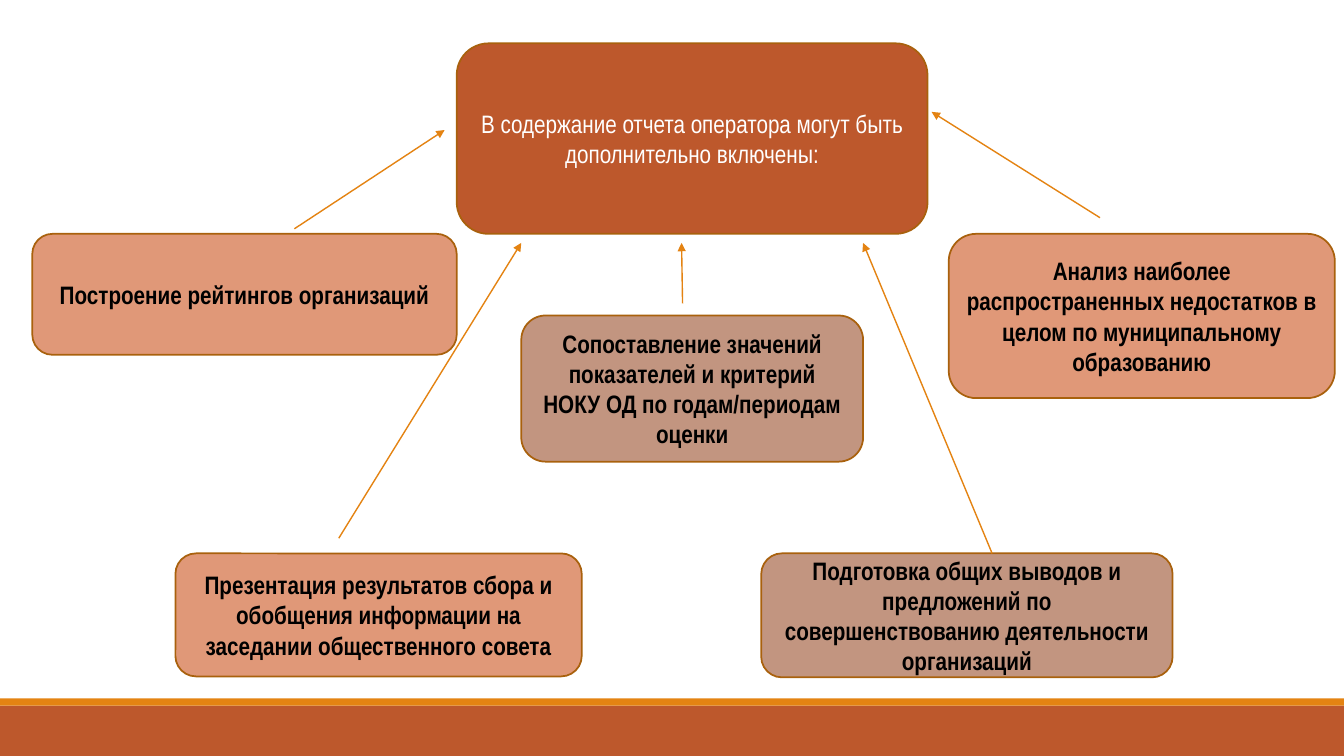
from pptx import Presentation
from pptx.dml.color import RGBColor
from pptx.enum.shapes import MSO_CONNECTOR, MSO_SHAPE
from pptx.enum.text import MSO_ANCHOR, PP_ALIGN
from pptx.oxml.ns import qn
from pptx.util import Inches, Pt
from lxml.etree import SubElement

RUST, ORANGE, BROWN = "BD582C", "E48312", "A9610D"
SALMON, TAUPE = "E09878", "C29580"
WHITE, BLACK = "FFFFFF", "000000"

BANDS = [(7, 0.5, RUST), (6.93, 0.07, ORANGE)]

TITLE = ("В содержание отчета оператора могут быть дополнительно включены:",
         (4.53, 0.43, 4.67, 1.89), RUST)

ITEMS = [
    ("Анализ наиболее распространенных недостатков в целом по муниципальному образованию",
     (9.41, 2.32, 3.83, 1.63), SALMON),
    ("Сопоставление значений показателей и критерий НОКУ ОД по годам/периодам оценки",
     (5.17, 3.13, 3.39, 1.45), TAUPE),
    ("Подготовка общих выводов и предложений по совершенствованию деятельности организаций",
     (7.55, 5.49, 4.08, 1.23), TAUPE),
    ("Презентация результатов сбора и обобщения информации на заседании общественного совета",
     (1.74, 5.49, 4.03, 1.22), SALMON),
    ("Построение рейтингов организаций",
     (0.32, 2.32, 4.21, 1.2), SALMON),
]

ARROWS = [
    ((3.36, 5.34), (5.17, 2.41)),
    ((2.92, 2.27), (4.41, 1.29)),
    ((10.91, 2.16), (9.24, 1.11)),
    ((6.77, 3.01), (6.76, 2.41)),
    ((9.84, 5.49), (8.56, 2.41)),
]


def color(value):
    return RGBColor.from_string(value)


def add_filled(slide, kind, box, fill):
    shape = slide.shapes.add_shape(kind, *map(Inches, box))
    shape.shadow.inherit = False
    shape.fill.solid()
    shape.fill.fore_color.rgb = color(fill)
    return shape


def add_band(slide, top, height, fill):
    band = add_filled(slide, MSO_SHAPE.RECTANGLE, (0, top, 13.33, height), fill)
    band.line.fill.background()


def add_box(slide, text, box, fill, text_color, bold):
    shape = add_filled(slide, MSO_SHAPE.ROUNDED_RECTANGLE, box, fill)
    shape.line.color.rgb = color(BROWN)
    shape.line.width = Pt(1.25)
    frame = shape.text_frame
    frame.word_wrap = True
    frame.vertical_anchor = MSO_ANCHOR.MIDDLE
    paragraph = frame.paragraphs[0]
    paragraph.text = text
    paragraph.alignment = PP_ALIGN.CENTER
    paragraph.font.name = "Arial Narrow"
    paragraph.font.size = Pt(18)
    paragraph.font.bold = bold
    paragraph.font.color.rgb = color(text_color)


def add_arrow(slide, start, end):
    arrow = slide.shapes.add_connector(MSO_CONNECTOR.STRAIGHT, *map(Inches, start + end))
    arrow.line.color.rgb = color(ORANGE)
    arrow.line.width = Pt(1)
    SubElement(arrow.line._get_or_add_ln(), qn("a:tailEnd"), type="triangle")
    SubElement(arrow._element.spPr, qn("a:effectLst"))


def main():
    presentation = Presentation()
    presentation.slide_width = Inches(13.33)
    presentation.slide_height = Inches(7.5)
    slide = presentation.slides.add_slide(presentation.slide_layouts[6])
    for band in BANDS:
        add_band(slide, *band)
    add_box(slide, *TITLE, WHITE, False)
    for item in ITEMS:
        add_box(slide, *item, BLACK, True)
    for start, end in ARROWS:
        add_arrow(slide, start, end)
    presentation.save("out.pptx")


if __name__ == "__main__":
    main()
